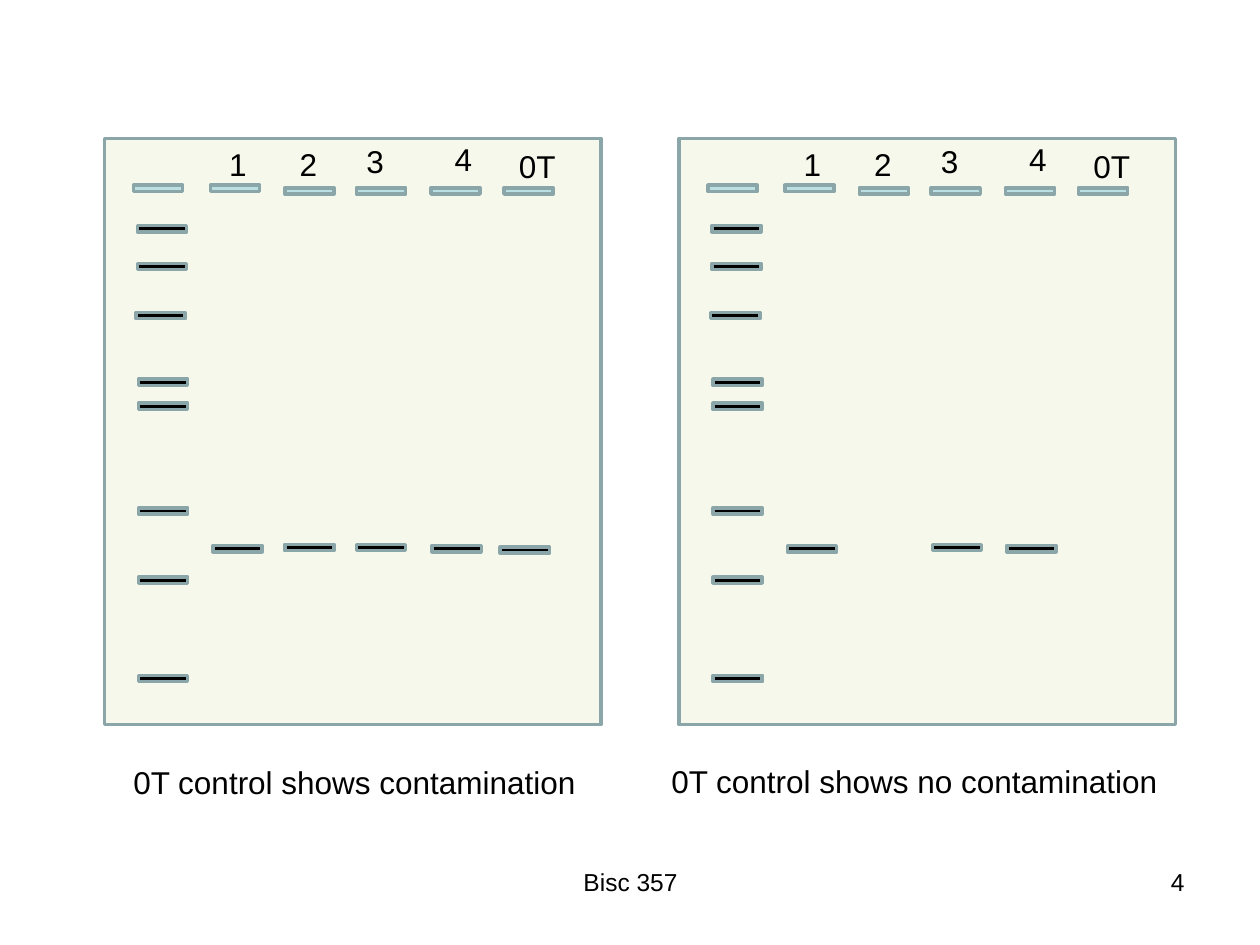
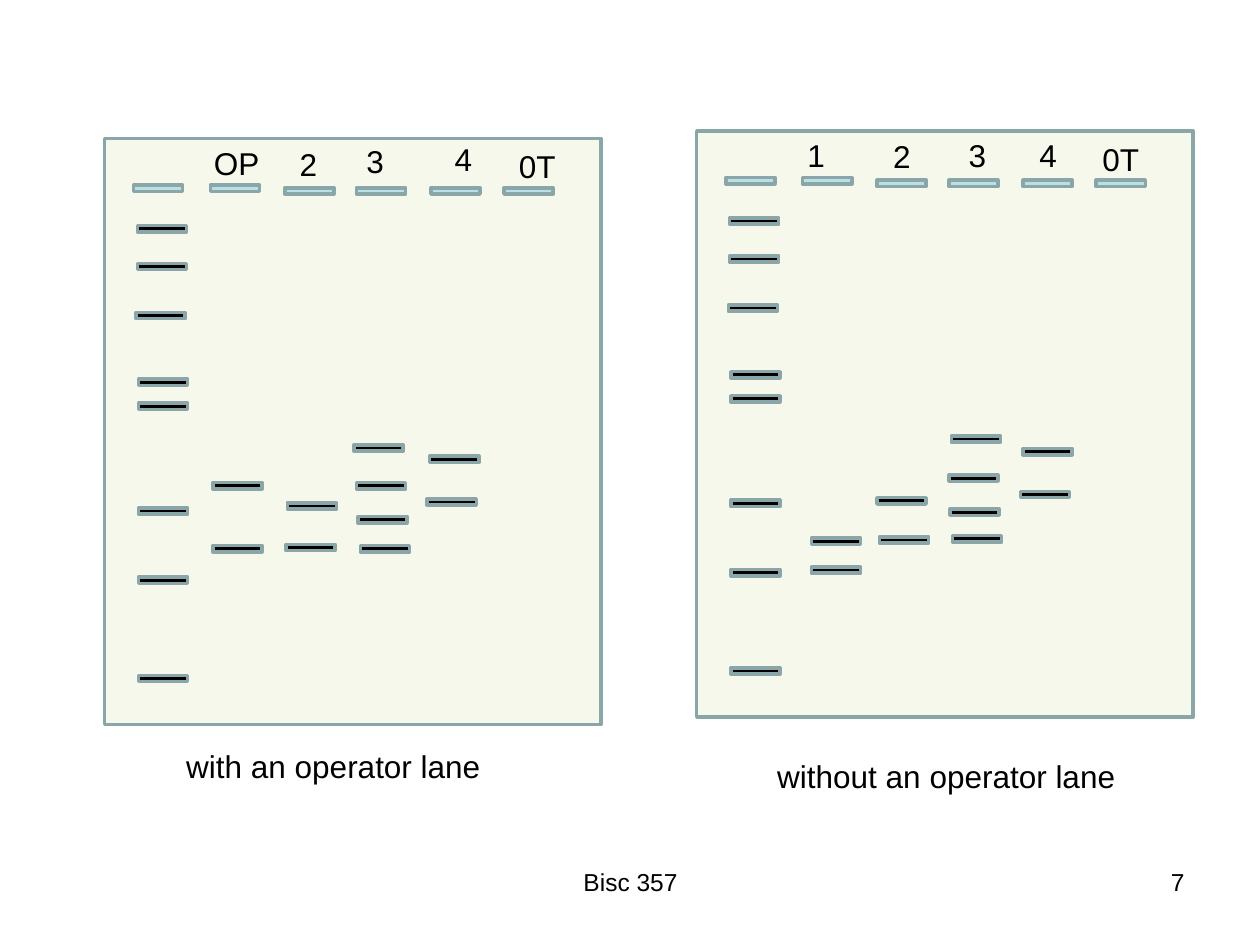
from pptx import Presentation
from pptx.dml.color import RGBColor
from pptx.enum.shapes import MSO_SHAPE as Shape
from pptx.enum.text import MSO_AUTO_SIZE as AutoSize, PP_ALIGN as Align
from pptx.util import Inches, Pt

FONT = "Arial"
INK, GEL, WELL, EDGE = "000000", "F5F8EA", "BBE0E3", "8AA6A8"
GEL_SIZE = (3.94, 4.65)
BAND_SIZE = (0.39, 0.05)
TEXT_HEIGHT = 0.4
FOOTER = "Bisc 357"

# Offsets below are (x, y) from the top left corner of a gel.
WELLS = [(0.23, 0.37), (0.84, 0.37), (1.43, 0.39), (2, 0.39), (2.59, 0.39), (3.17, 0.39)]
LADDER = [(0.26, 0.69), (0.26, 0.99), (0.25, 1.38), (0.27, 1.91),
          (0.27, 2.1), (0.27, 2.93), (0.27, 3.48), (0.27, 4.26)]
LABEL_WIDTHS = {"OP": 0.57, "0T": 0.5}
DIGIT_WIDTH = 0.34
LABELS = [("1", 0.89, 0), ("2", 1.45, 0), ("3", 1.98, -0.02), ("4", 2.68, -0.04), ("0T", 3.19, 0.02)]
OPERATOR_LABELS = [("OP", 0.77, -0.01)] + LABELS[1:]
SHIFTED_LABELS = [("1", 0.78, -0.01), ("2", 1.46, 0), ("3", 2.06, -0.01),
                  ("4", 2.62, -0.01), ("0T", 3.12, 0.02)]

SLIDES = [
    {"number": "4", "gels": [
        {"at": (0.83, 1.1), "labels": LABELS,
         "bands": [(0.86, 3.23), (1.43, 3.22), (2, 3.22), (2.6, 3.23), (3.14, 3.24)],
         "caption": ("0T control shows contamination", 0.96, 6.01, 3.75)},
        {"at": (5.39, 1.1), "labels": LABELS,
         "bands": [(0.86, 3.23), (2.01, 3.22), (2.6, 3.23)],
         "caption": ("0T control shows no contamination", 5.23, 6, 4.1)},
    ]},
    {"number": "7", "gels": [
        {"at": (0.83, 1.1), "labels": OPERATOR_LABELS,
         "bands": [(0.86, 2.73), (0.86, 3.23), (1.45, 2.89), (1.44, 3.22),
                   (1.98, 2.43), (2, 2.73), (2.01, 3), (2.03, 3.23),
                   (2.58, 2.52), (2.56, 2.86)],
         "caption": ("with an operator lane", 1.38, 5.88, 2.56)},
        {"at": (5.53, 1.04), "labels": SHIFTED_LABELS,
         "bands": [(0.91, 3.23), (0.91, 3.46), (1.43, 2.91), (1.45, 3.22),
                   (2.02, 2.42), (2, 2.73), (2.01, 3), (2.03, 3.21),
                   (2.59, 2.52), (2.57, 2.86)],
         "caption": ("without an operator lane", 6.07, 5.96, 2.98)},
    ]},
]


def rgb(value):
    return RGBColor.from_string(value)


def add_rect(shapes, x, y, size, fill):
    sp = shapes.add_shape(Shape.RECTANGLE, *map(Inches, (x, y, *size)))
    sp.shadow.inherit = False
    sp.fill.solid()
    sp.fill.fore_color.rgb = rgb(fill)
    sp.line.color.rgb = rgb(EDGE)
    sp.line.width = Pt(2)


def add_text(shapes, text, x, y, width, height=TEXT_HEIGHT, size=18, align=None):
    """Add one line of text; without an alignment the box fits its text."""
    tf = shapes.add_textbox(*map(Inches, (x, y, width, height))).text_frame
    tf.word_wrap = align is not None
    tf.auto_size = AutoSize.NONE if align else AutoSize.SHAPE_TO_FIT_TEXT
    p = tf.paragraphs[0]
    p.text = text
    p.alignment = align
    font = p.runs[0].font
    font.name, font.size = FONT, Pt(size)
    font.color.rgb = rgb(INK)


def add_gel(slide, gel):
    left, top = gel["at"]
    shapes = slide.shapes.add_group_shape().shapes
    add_rect(shapes, left, top, GEL_SIZE, GEL)
    for offsets, fill in ((WELLS, WELL), (LADDER, INK), (gel["bands"], INK)):
        for dx, dy in offsets:
            add_rect(shapes, left + dx, top + dy, BAND_SIZE, fill)
    for text, dx, dy in gel["labels"]:
        add_text(shapes, text, left + dx, top + dy, LABEL_WIDTHS.get(text, DIGIT_WIDTH))
    add_text(slide.shapes, *gel["caption"])


def add_footer(slide, number):
    add_text(slide.shapes, FOOTER, 3.42, 6.83, 3.17, 0.52, 14, Align.CENTER)
    add_text(slide.shapes, number, 7.17, 6.83, 2.33, 0.52, 14, Align.RIGHT)


def main():
    prs = Presentation()
    prs.slide_width, prs.slide_height = Inches(10), Inches(7.5)
    for content in SLIDES:
        slide = prs.slides.add_slide(prs.slide_layouts[6])
        add_footer(slide, content["number"])
        for gel in content["gels"]:
            add_gel(slide, gel)
    prs.save("out.pptx")


if __name__ == "__main__":
    main()
